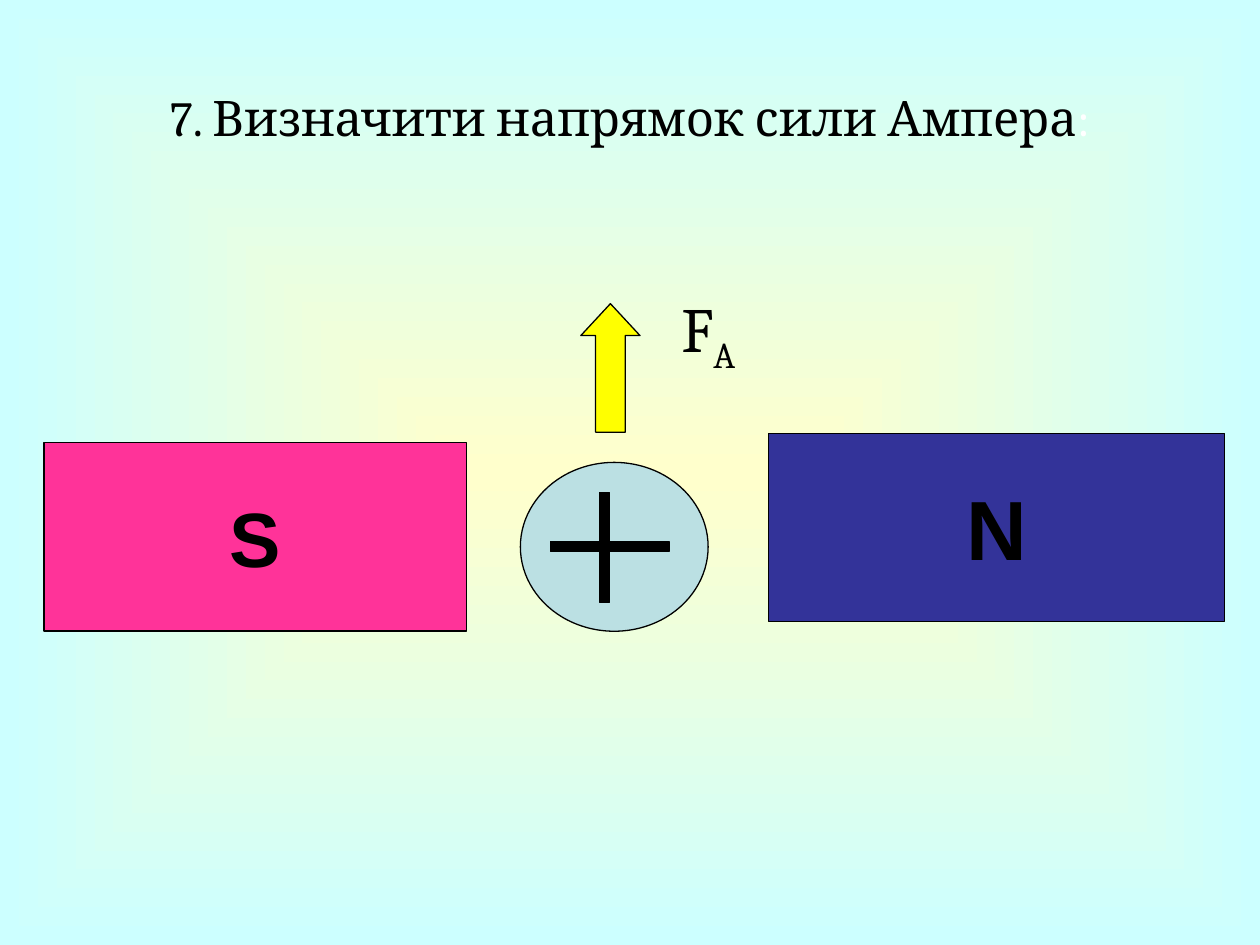
from lxml.etree import SubElement
from pptx import Presentation
from pptx.dml.color import RGBColor
from pptx.enum.shapes import MSO_SHAPE as Shape
from pptx.enum.text import MSO_ANCHOR as Anchor, PP_ALIGN as Align
from pptx.oxml.ns import qn
from pptx.util import Inches, Pt

BLACK, WHITE = "000000", "FFFFFF"


def colour(value):
    return RGBColor.from_string(value)


class SlideBuilder:
    heading_font, pole_font = "Cambria", "Arial"
    line_width = Pt(0.75)

    def __init__(self, page):
        self.page = page

    def background(self, centre, edge):
        fill = self.page.background.fill
        fill.gradient()
        for stop, value in zip(fill.gradient_stops, (centre, edge)):
            stop.color.rgb = colour(value)
        gradient = self.page.element.find(".//" + qn("a:gradFill"))
        gradient.remove(gradient.find(qn("a:lin")))
        shade = SubElement(gradient, qn("a:path"), {"path": "shape"})
        middle = {side: "50000" for side in "ltrb"}
        SubElement(shade, qn("a:fillToRect"), middle)

    def set_text(self, frame, spans, align, **frame_format):
        """Fill a frame with one paragraph of (text, font format) spans."""
        for name, value in frame_format.items():
            setattr(frame, name, value)
        para = frame.paragraphs[0]
        para.alignment = align
        for text, font_format in spans:
            span = para.add_run()
            span.text = text
            for name, value in font_format.items():
                if name == "color":
                    span.font.color.rgb = colour(value)
                elif name == "baseline":
                    span.font._element.set("baseline", str(value))
                else:
                    setattr(span.font, name, value)

    def text(self, at, spans, align=Align.LEFT, anchor=Anchor.TOP):
        box = self.page.shapes.add_textbox(*map(Inches, at))
        self.set_text(box.text_frame, spans, align,
                      word_wrap=True, vertical_anchor=anchor)

    def shape(self, kind, at, fill, adjustments=()):
        shape = self.page.shapes.add_shape(kind, *map(Inches, at))
        shape.shadow.inherit = False
        shape.fill.solid()
        shape.fill.fore_color.rgb = colour(fill)
        shape.line.color.rgb = colour(BLACK)
        shape.line.width = self.line_width
        for index, value in enumerate(adjustments):
            shape.adjustments[index] = value
        return shape

    def pole(self, letter, at, fill, size):
        magnet = self.shape(Shape.RECTANGLE, at, fill)
        font = dict(name=self.pole_font, size=Pt(size), bold=True, color=BLACK)
        self.set_text(magnet.text_frame, [(letter, font)], Align.CENTER,
                      word_wrap=False, vertical_anchor=Anchor.MIDDLE)


def main():
    deck = Presentation()
    deck.slide_width, deck.slide_height = Inches(10), Inches(7.5)
    builder = SlideBuilder(deck.slides.add_slide(deck.slide_layouts[6]))
    builder.background("FFFFCC", "CCFFFF")

    # Title
    title = dict(name=builder.heading_font, size=Pt(28), color=BLACK)
    builder.text((0.5, 0.3, 9, 1.25),
                 [("7. Визначити напрямок сили Ампера", title),
                  (":", {**title, "color": WHITE})],
                 Align.CENTER, Anchor.MIDDLE)

    # Magnet poles
    builder.pole("N", (6.1, 3.44, 3.62, 1.49), "333399", 48)
    builder.pole("S", (0.35, 3.51, 3.35, 1.5), "FF3399", 44)

    # Conductor with the current flowing away from the viewer
    builder.shape(Shape.OVAL, (4.13, 3.67, 1.49, 1.34), "BBE0E3")
    for bar in ((4.37, 4.3, 0.94, 0.08), (4.76, 3.91, 0.08, 0.87)):
        builder.shape(Shape.RECTANGLE, bar, BLACK)

    # Force arrow and its label
    builder.shape(Shape.UP_ARROW, (4.61, 2.41, 0.47, 1.02), "FFFF00",
                  (0.5, 0.54))
    force = dict(name=builder.heading_font, size=Pt(36), color=BLACK)
    builder.text((5.31, 2.25, 1.34, 0.7),
                 [("F", force), ("A", {**force, "baseline": -25000})])

    deck.save("out.pptx")


if __name__ == "__main__":
    main()
